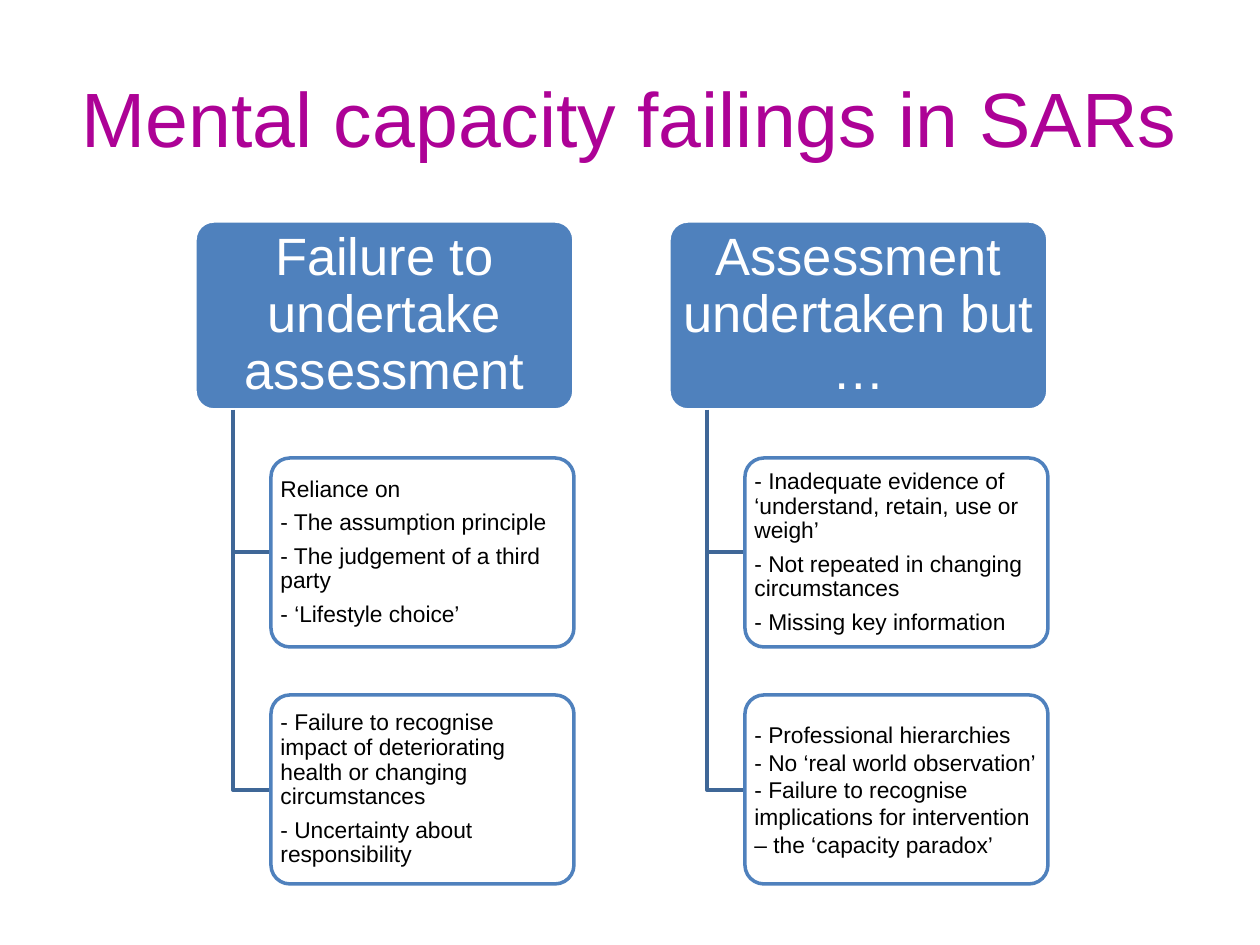
from pptx import Presentation, util as u
from pptx.dml.color import RGBColor
from pptx.enum import shapes, text
from pptx.oxml.ns import qn
from lxml import etree

TITLE = "Mental capacity failings in SARs"
COLUMNS = [
    ("Failure to undertake assessment", [
        (["Reliance on", "- The assumption principle",
          "- The judgement of a third party", "- ‘Lifestyle choice’"], True),
        (["- Failure to recognise impact of deteriorating health or changing circumstances",
          "- Uncertainty about responsibility"], True),
    ]),
    ("Assessment undertaken but …", [
        (["- Inadequate evidence of ‘understand, retain, use or weigh’",
          "- Not repeated in changing circumstances", "- Missing key information"], True),
        (["- Professional hierarchies", "- No ‘real world observation’",
          "- Failure to recognise implications for intervention – the ‘capacity paradox’"], False),
    ]),
]
THEME = dict(font="Arial", title="AD0296", blue="4F81BD", line="3F6797", white="FFFFFF",
             black="000000", title_size=44, head_size=30, card_size=13, line_width=2)

# All lengths in px, 126 to the inch
PX = 914400 / 126
SLIDE_W, SLIDE_H = 1260, 945
LEFT, TOP, COLUMN_STEP = 195, 221, 474
HEAD_W, BOX_H, ROW_STEP = 379, 189, 237
SPINE_INDENT, CARD_INDENT = 38, 76
CARD_W = HEAD_W - CARD_INDENT


def px(n):
    return u.Emu(round(n * PX))


def rgb(name):
    return RGBColor.from_string(THEME[name])


def write(shape, paragraphs, size, color, align, insets=None, spacing=None, after=0):
    tf = shape.text_frame
    tf.word_wrap = True
    tf.vertical_anchor = text.MSO_ANCHOR.MIDDLE
    if insets:
        tf.margin_left = tf.margin_right = px(insets[0])
        tf.margin_top = tf.margin_bottom = px(insets[1])
    for i, line in enumerate(paragraphs):
        p = tf.paragraphs[0] if i == 0 else tf.add_paragraph()
        p.alignment = align
        if spacing:
            p.line_spacing = spacing
            p.space_after = u.Pt(after)
        r = p.add_run()
        r.text = line
        r.font.name, r.font.size = THEME["font"], u.Pt(THEME[size])
        r.font.color.rgb = rgb(color)


def add_box(s, x, y, w, fill, line, opacity=100):
    sp = s.shapes.add_shape(shapes.MSO_SHAPE.ROUNDED_RECTANGLE, px(x), px(y), px(w), px(BOX_H))
    sp.adjustments[0] = 0.1
    sp.shadow.inherit = False
    sp.fill.solid()
    sp.fill.fore_color.rgb = rgb(fill)
    if opacity < 100:
        color = sp.fill._xPr.find(qn("a:solidFill"))[0]
        etree.SubElement(color, qn("a:alpha"), val=str(opacity * 1000))
    sp.line.color.rgb = rgb(line)
    sp.line.width = u.Pt(THEME["line_width"])
    return sp


def add_elbow(s, x, top, end_x, end_y):
    builder = s.shapes.build_freeform(x, top, scale=PX)
    builder.add_line_segments([(x, end_y), (end_x, end_y)], close=False)
    sp = builder.convert_to_shape()
    sp.shadow.inherit = False
    sp.fill.background()
    sp.line.color.rgb = rgb("line")
    sp.line.width = u.Pt(THEME["line_width"])


def add_column(s, x, heading, cards):
    head = add_box(s, x, TOP, HEAD_W, "blue", "white")
    write(head, [heading], "head_size", "white", text.PP_ALIGN.CENTER,
          insets=(7, 5), spacing=0.9)
    for row, (lines, spaced) in enumerate(cards, 1):
        y = TOP + row * ROW_STEP
        add_elbow(s, x + SPINE_INDENT, TOP + BOX_H, x + CARD_INDENT, y + BOX_H / 2)
        card = add_box(s, x + CARD_INDENT, y, CARD_W, "white", "blue", opacity=90)
        write(card, lines, "card_size", "black", text.PP_ALIGN.LEFT, insets=(4, 3),
              spacing=0.9 if spaced else None, after=5)


def main():
    prs = Presentation()
    prs.slide_width, prs.slide_height = px(SLIDE_W), px(SLIDE_H)
    s = prs.slides.add_slide(prs.slide_layouts[5])
    title = s.shapes.title
    title.left, title.top, title.width, title.height = px(63), px(38), px(1134), px(158)
    write(title, [TITLE], "title_size", "title", text.PP_ALIGN.CENTER)
    for i, (heading, cards) in enumerate(COLUMNS):
        add_column(s, LEFT + i * COLUMN_STEP, heading, cards)
    prs.save("out.pptx")


if __name__ == "__main__":
    main()
